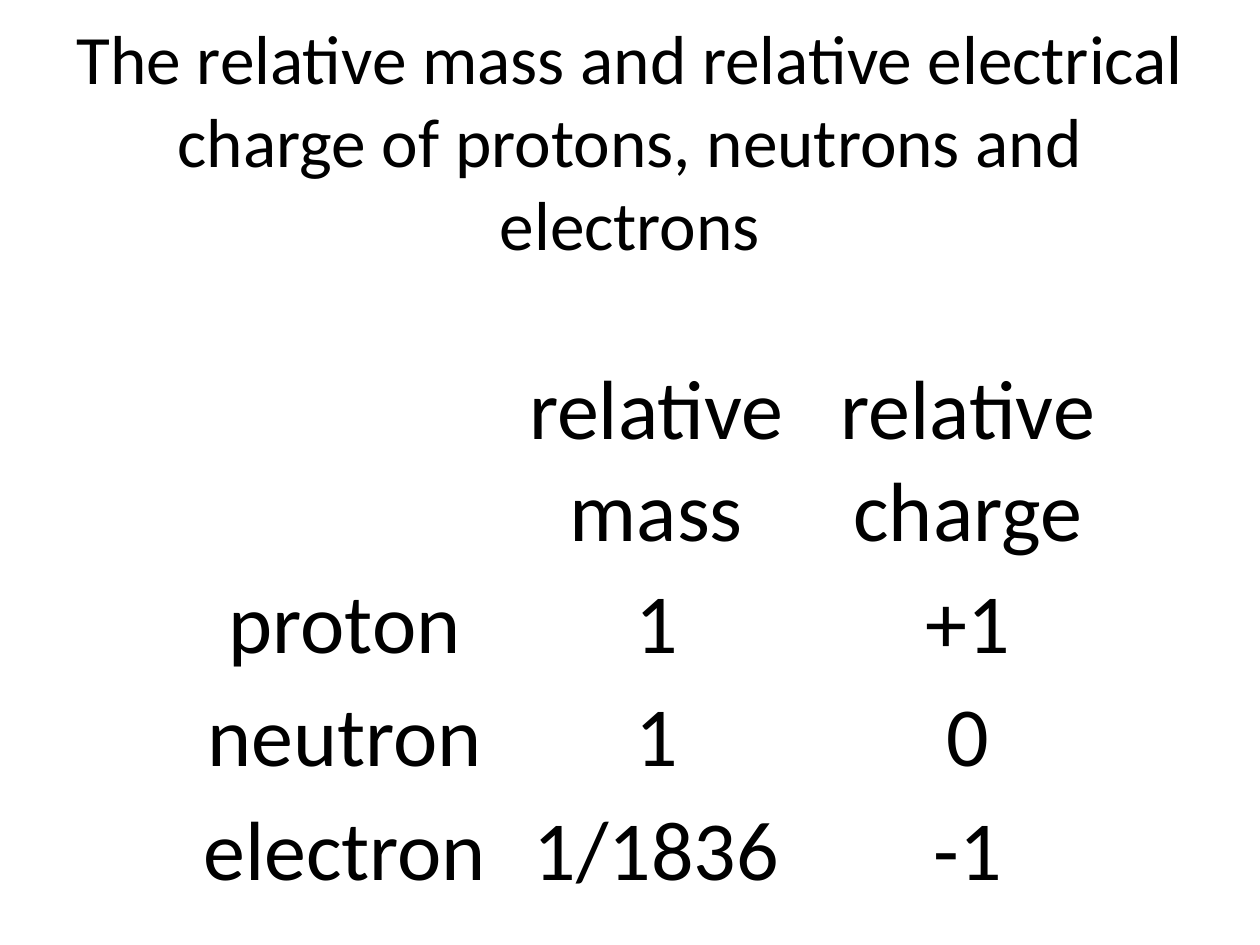
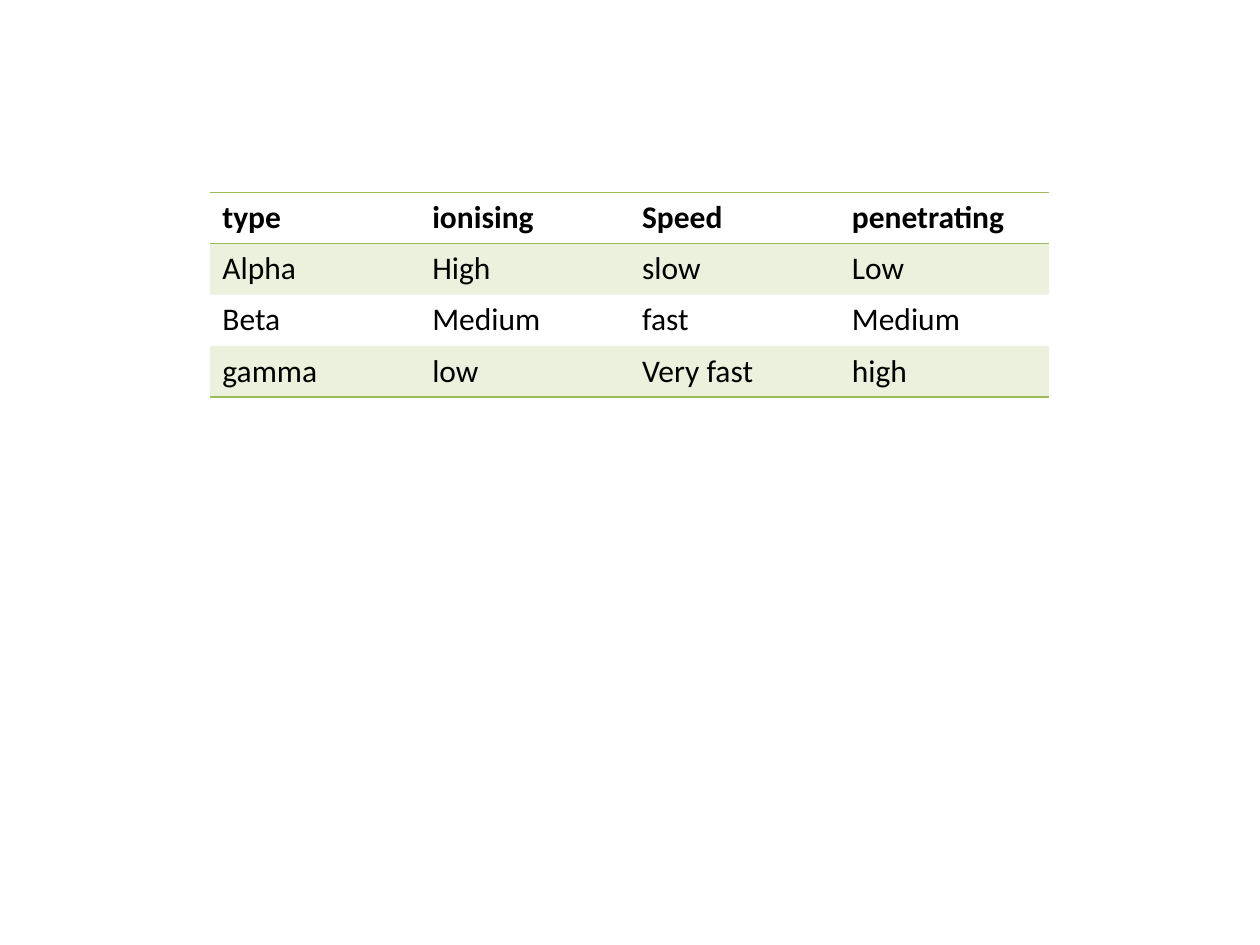
from lxml import etree
from pptx import Presentation
from pptx import util as u
from pptx.dml.color import RGBColor
from pptx.enum import text
from pptx.oxml import ns

FONT = "Calibri"
BLACK = "000000"
GREEN = "9BBB59"
NO_STYLE = "{2D5ABB26-0587-4C30-8999-92F81FD0307C}"

TITLE = "The relative mass and relative electrical charge of protons, neutrons and electrons"
PARTICLES = [
    ["", "relative mass", "relative charge"],
    ["proton", "1", "+1"],
    ["neutron", "1", "0"],
    ["electron", "1/1836", "-1"],
]
RADIATION = [
    ["type", "ionising", "Speed", "penetrating"],
    ["Alpha", "High", "slow", "Low"],
    ["Beta", "Medium", "fast", "Medium"],
    ["gamma", "low", "Very fast", "high"],
]


def color(value):
    return RGBColor.from_string(value)


def format_text(frame, size, bold=False, align=text.PP_ALIGN.LEFT):
    for para in frame.paragraphs:
        para.alignment = align
        for span in para.runs:
            span.font.name = FONT
            span.font.size = u.Pt(size)
            span.font.bold = bold
            span.font.color.rgb = color(BLACK)


def add_title(page, words):
    box = page.shapes.add_textbox(u.Cm(1.27), u.Cm(0.76), u.Cm(22.86), u.Cm(5.79))
    frame = box.text_frame
    frame.word_wrap = True
    frame.vertical_anchor = text.MSO_ANCHOR.MIDDLE
    frame.margin_bottom = u.Cm(1.8)
    frame.text = words
    format_text(frame, 39.6, align=text.PP_ALIGN.CENTER)


def add_grid(page, rows, left, top, column_width, row_heights):
    frame = page.shapes.add_table(
        len(rows), len(rows[0]), u.Cm(left), u.Cm(top),
        u.Cm(column_width * len(rows[0])), u.Cm(sum(row_heights)))
    grid = frame.table
    grid.first_row = grid.horz_banding = False
    grid._tbl.tblPr.find(ns.qn("a:tableStyleId")).text = NO_STYLE
    for column in grid.columns:
        column.width = u.Cm(column_width)
    for row, height, words in zip(grid.rows, row_heights, rows):
        row.height = u.Cm(height)
        for cell, word in zip(row.cells, words):
            cell.text = word
            cell.fill.background()
    return grid


def add_border(cell, side):
    line = etree.SubElement(cell._tc.get_or_add_tcPr(), ns.qn("a:ln" + side), w=str(u.Pt(1)))
    fill = etree.SubElement(line, ns.qn("a:solidFill"))
    etree.SubElement(fill, ns.qn("a:srgbClr"), val=GREEN)


def tint(cell, percent):
    cell.fill.solid()
    cell.fill.fore_color.rgb = color(GREEN)
    shade = cell._tc.tcPr.find(ns.qn("a:solidFill")).find(ns.qn("a:srgbClr"))
    etree.SubElement(shade, ns.qn("a:alpha"), val=str(percent * 1000))


def build_particles(page):
    add_title(page, TITLE)
    grid = add_grid(page, PARTICLES, 3.81, 7.11, 6.28, [3.61] + [2.06] * 3)
    for cell in grid.iter_cells():
        cell.vertical_anchor = text.MSO_ANCHOR.MIDDLE
        format_text(cell.text_frame, 48, align=text.PP_ALIGN.CENTER)


def build_radiation(page):
    grid = add_grid(page, RADIATION, 4.23, 3.88, 4.23, [1.03] * 4)
    borders = {0: "TB", len(RADIATION) - 1: "B"}
    for index, row in enumerate(grid.rows):
        for cell in row.cells:
            format_text(cell.text_frame, 18, bold=index == 0)
            cell._tc.tcPr.clear()
            for side in borders.get(index, ""):
                add_border(cell, side)
            if index % 2:
                tint(cell, 20)
            else:
                cell.fill.background()


def main():
    deck = Presentation()
    deck.slide_width, deck.slide_height = u.Cm(25.4), u.Cm(19.05)
    for build in (build_particles, build_radiation):
        build(deck.slides.add_slide(deck.slide_layouts[6]))
    deck.save("out.pptx")


if __name__ == "__main__":
    main()
